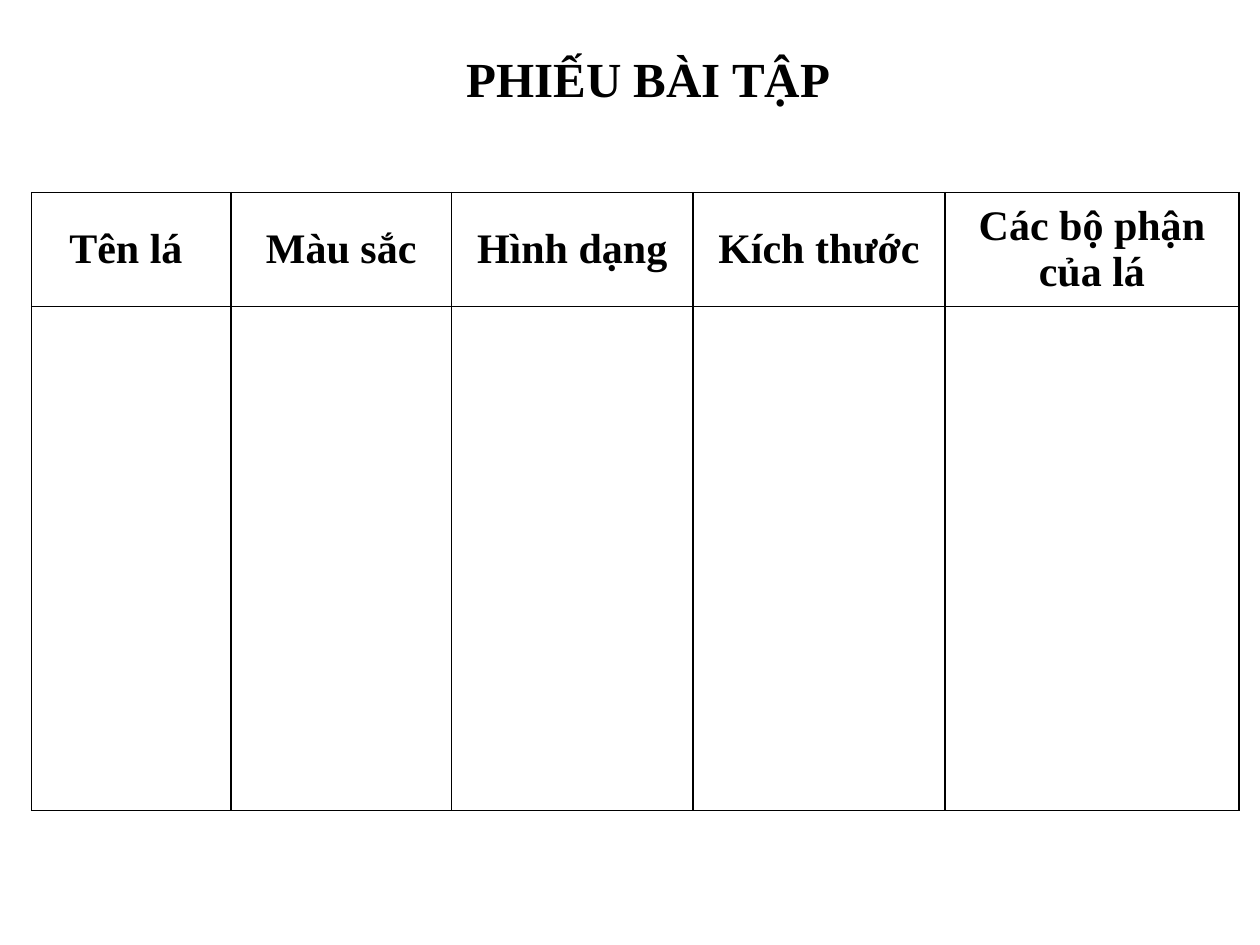
from lxml.etree import SubElement
from pptx import Presentation
from pptx.dml.color import RGBColor
from pptx.enum.text import MSO_ANCHOR, MSO_AUTO_SIZE, PP_ALIGN
from pptx.oxml.ns import qn
from pptx.util import Pt

TITLE = "PHIẾU BÀI TẬP"
COLUMNS = [
    ("Tên lá ", 114),
    ("Màu sắc", 126),
    ("Hình dạng", 138),
    ("Kích thước", 144),
    ("Các bộ phận của lá", 168),
]
ROW_HEIGHTS = [65, 288]
TABLE_LEFT, TABLE_TOP = 18, 110
INK, PAPER = "000000", "FFFFFF"


def color(value):
    return RGBColor.from_string(value)


def write(tf, text, size):
    tf.vertical_anchor = MSO_ANCHOR.MIDDLE
    p = tf.paragraphs[0]
    p.alignment = PP_ALIGN.CENTER
    r = p.add_run()
    r.text = text
    formats = {"name": "Times New Roman", "size": Pt(size), "bold": True}
    for name, value in formats.items():
        setattr(r.font, name, value)
    r.font.color.rgb = color(INK)


def style_cell(cell):
    tc_pr = cell._tc.get_or_add_tcPr()
    for side in ("lnL", "lnR", "lnT", "lnB"):
        line = SubElement(tc_pr, qn(f"a:{side}"), w=str(Pt(1)))
        SubElement(SubElement(line, qn("a:solidFill")), qn("a:srgbClr"), val=INK)
    cell.fill.solid()
    cell.fill.fore_color.rgb = color(PAPER)


prs = Presentation()
prs.slide_width, prs.slide_height = Pt(720), Pt(540)
s = prs.slides.add_slide(prs.slide_layouts[5])

title = s.shapes.title
title.left, title.top, title.width, title.height = map(Pt, (258, 24, 225, 41))
tf = title.text_frame
tf.word_wrap = False
tf.auto_size = MSO_AUTO_SIZE.SHAPE_TO_FIT_TEXT
write(tf, TITLE, 28)

widths = [width for _, width in COLUMNS]
table = s.shapes.add_table(
    len(ROW_HEIGHTS), len(COLUMNS),
    Pt(TABLE_LEFT), Pt(TABLE_TOP), Pt(sum(widths)), Pt(sum(ROW_HEIGHTS)),
).table
for row, height in zip(table.rows, ROW_HEIGHTS):
    row.height = Pt(height)
for i, (heading, width) in enumerate(COLUMNS):
    table.columns[i].width = Pt(width)
    write(table.cell(0, i).text_frame, heading, 24)
    table.cell(0, i).vertical_anchor = MSO_ANCHOR.MIDDLE
for cell in table.iter_cells():
    style_cell(cell)

prs.save("out.pptx")
